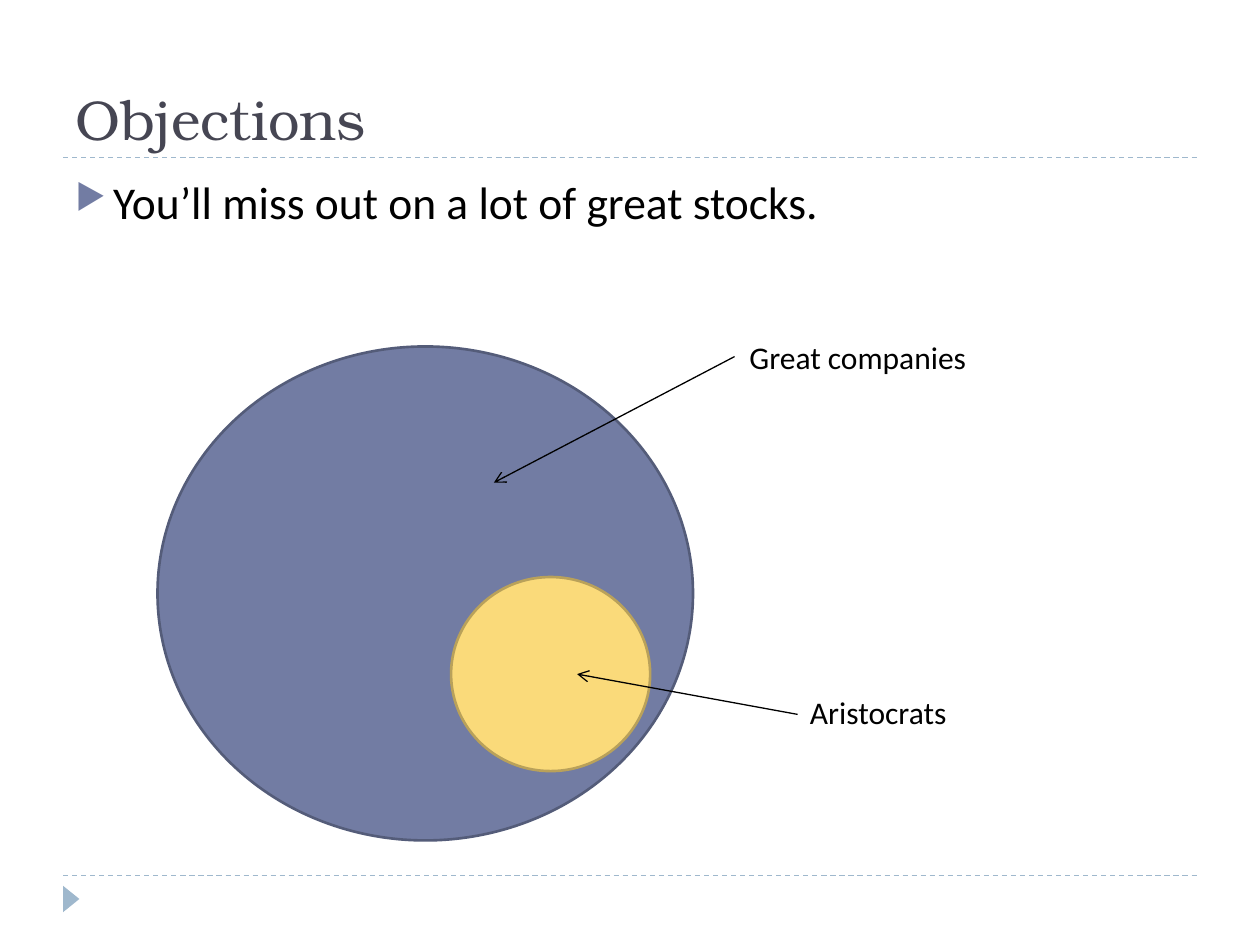
from collections import namedtuple
from dataclasses import dataclass

from lxml import etree
from pptx import Presentation
from pptx.dml.color import RGBColor
from pptx.enum import dml, shapes, text
from pptx.oxml import ns
from pptx.util import Inches, Pt

Box = namedtuple("Box", "left top width height")


@dataclass(frozen=True)
class Theme:
    heading_font: str = "TeX Gyre Bonum"
    body_font: str = "Calibri"
    title_size: int = 32
    body_size: int = 26
    label_size: int = 18
    title: str = "464653"
    ink: str = "000000"
    rule: str = "9FB8CD"
    companies: str = "727CA3"
    companies_edge: str = "545C79"
    aristocrats: str = "FADA7A"
    aristocrats_edge: str = "B9A15A"


THEME = Theme()


def add_xml(parent, tag, **attributes):
    return etree.SubElement(parent, ns.qn(tag), attributes)


def add_text(slide, box, words, size, color=THEME.ink, font=THEME.body_font,
             anchor=text.MSO_ANCHOR.TOP):
    """Add a wrapped one-paragraph text box and return its paragraph."""
    frame = slide.shapes.add_textbox(*map(Inches, box)).text_frame
    frame.word_wrap = True
    frame.vertical_anchor = anchor
    paragraph = frame.paragraphs[0]
    paragraph.text = words
    paragraph.font.name = font
    paragraph.font.size = Pt(size)
    paragraph.font.color.rgb = RGBColor.from_string(color)
    return paragraph


def add_line(slide, start, end, color):
    line = slide.shapes.add_connector(
        shapes.MSO_CONNECTOR.STRAIGHT, *map(Inches, (*start, *end)))
    line.line.color.rgb = RGBColor.from_string(color)
    line.line.width = Pt(0.75)
    add_xml(line._element.spPr, "a:effectLst")
    return line


def add_rule(slide, left, top, width):
    rule = add_line(slide, (left, top), (left + width, top), THEME.rule)
    rule.line.dash_style = dml.MSO_LINE.DASH


def add_arrow(slide, start, end):
    arrow = add_line(slide, start, end, THEME.ink)
    add_xml(arrow.line._get_or_add_ln(), "a:tailEnd", type="arrow")


def add_filled(slide, kind, box, fill, edge=None):
    shape = slide.shapes.add_shape(kind, *map(Inches, box))
    shape.shadow.inherit = False
    shape.fill.solid()
    shape.fill.fore_color.rgb = RGBColor.from_string(fill)
    if edge:
        shape.line.color.rgb = RGBColor.from_string(edge)
        shape.line.width = Pt(1.5)
    else:
        shape.line.fill.background()
    return shape


def add_header(slide, box, title):
    add_rule(slide, box.left, box.top + box.height, box.width)
    add_text(slide, box, title, THEME.title_size, THEME.title,
             THEME.heading_font, text.MSO_ANCHOR.BOTTOM)


def add_body(slide, box, words):
    paragraph = add_text(slide, box, words, THEME.body_size)
    paragraph.space_before = Pt(6)
    properties = paragraph._p.get_or_add_pPr()
    properties.set("marL", str(Inches(0.3)))
    properties.set("indent", str(Inches(-0.3)))
    bullet_color = add_xml(properties, "a:buClr")
    add_xml(bullet_color, "a:srgbClr", val=THEME.companies)
    add_xml(properties, "a:buSzPct", val="76000")
    add_xml(properties, "a:buChar", char="▶")


def add_venn(slide, box):
    """Draw the small circle inside the large one, each with a labelled arrow."""
    def place(x, y):
        return box.left + x, box.top + y

    oval = shapes.MSO_SHAPE.OVAL
    add_filled(slide, oval, Box(*place(0, 0), 4.25, 3.92),
               THEME.companies, THEME.companies_edge)
    add_filled(slide, oval, Box(*place(2.33, 1.83), 1.58, 1.54),
               THEME.aristocrats, THEME.aristocrats_edge)

    callouts = (
        ("Aristocrats", (5.08, 2.7), (5.08, 2.92), (3.33, 2.6)),
        ("Great companies", (4.6, -0.12), (4.58, 0.08), (2.67, 1.08)),
    )
    for label, corner, start, end in callouts:
        add_arrow(slide, place(*start), place(*end))
        add_text(slide, Box(*place(*corner), 2.17, 0.4), label,
                 THEME.label_size)


def add_footer(slide, box):
    add_rule(slide, box.left, box.top, box.width)
    marker = add_filled(slide, shapes.MSO_SHAPE.ISOSCELES_TRIANGLE,
                        Box(box.left - 0.04, box.top + 0.12, 0.21, 0.13),
                        THEME.rule)
    marker.rotation = 90


def main():
    presentation = Presentation()
    presentation.slide_width = Inches(10)
    presentation.slide_height = Inches(7.5)
    slide = presentation.slides.add_slide(presentation.slide_layouts[6])

    add_footer(slide, Box(0.5, 6.95, 9, 0.25))
    add_header(slide, Box(0.5, 0.17, 9, 1.08), "Objections")
    add_body(slide, Box(0.5, 1.33, 9, 5.4),
             "You’ll miss out on a lot of great stocks.")
    add_venn(slide, Box(1.25, 2.75, 7.25, 3.92))
    presentation.save("out.pptx")


if __name__ == "__main__":
    main()
